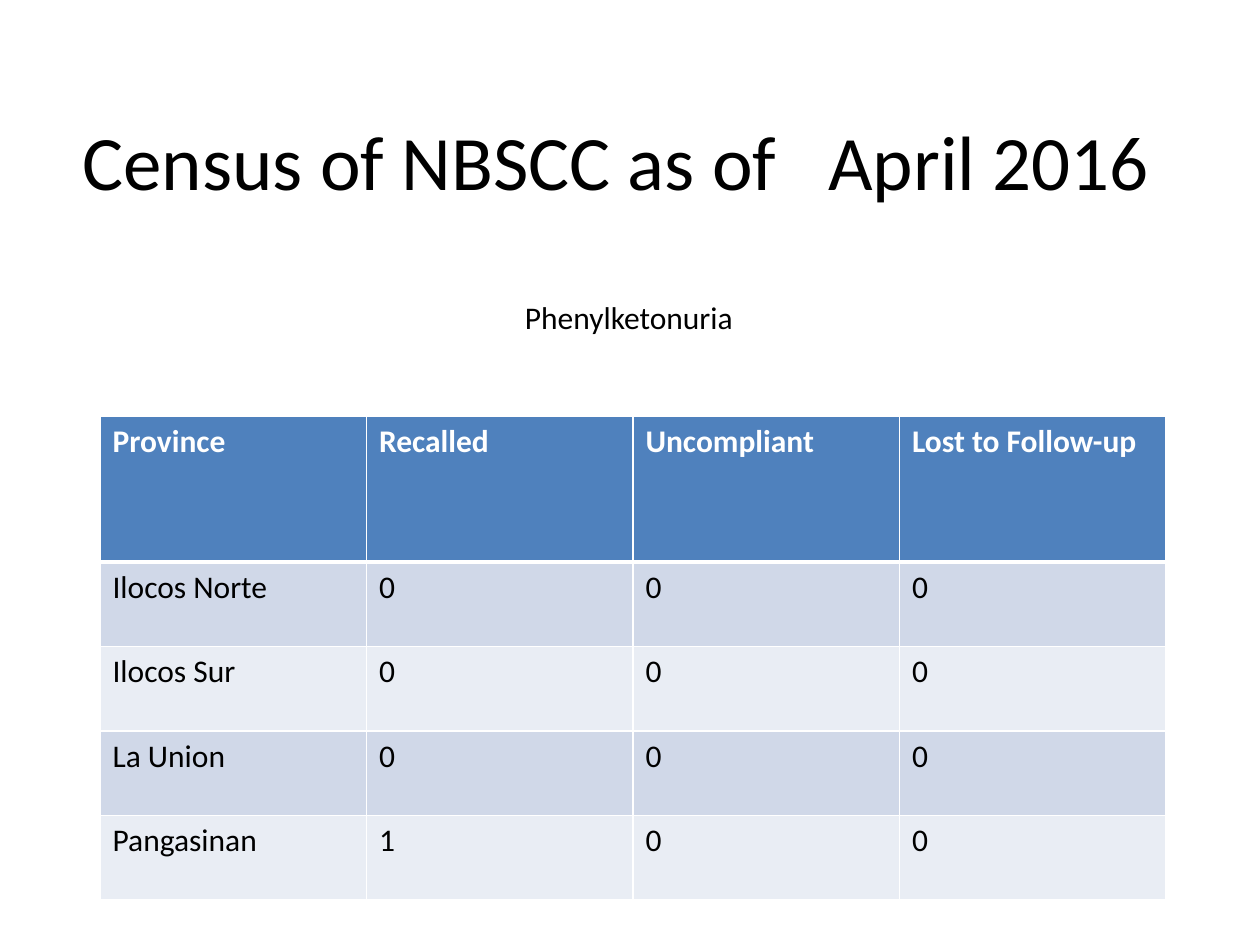
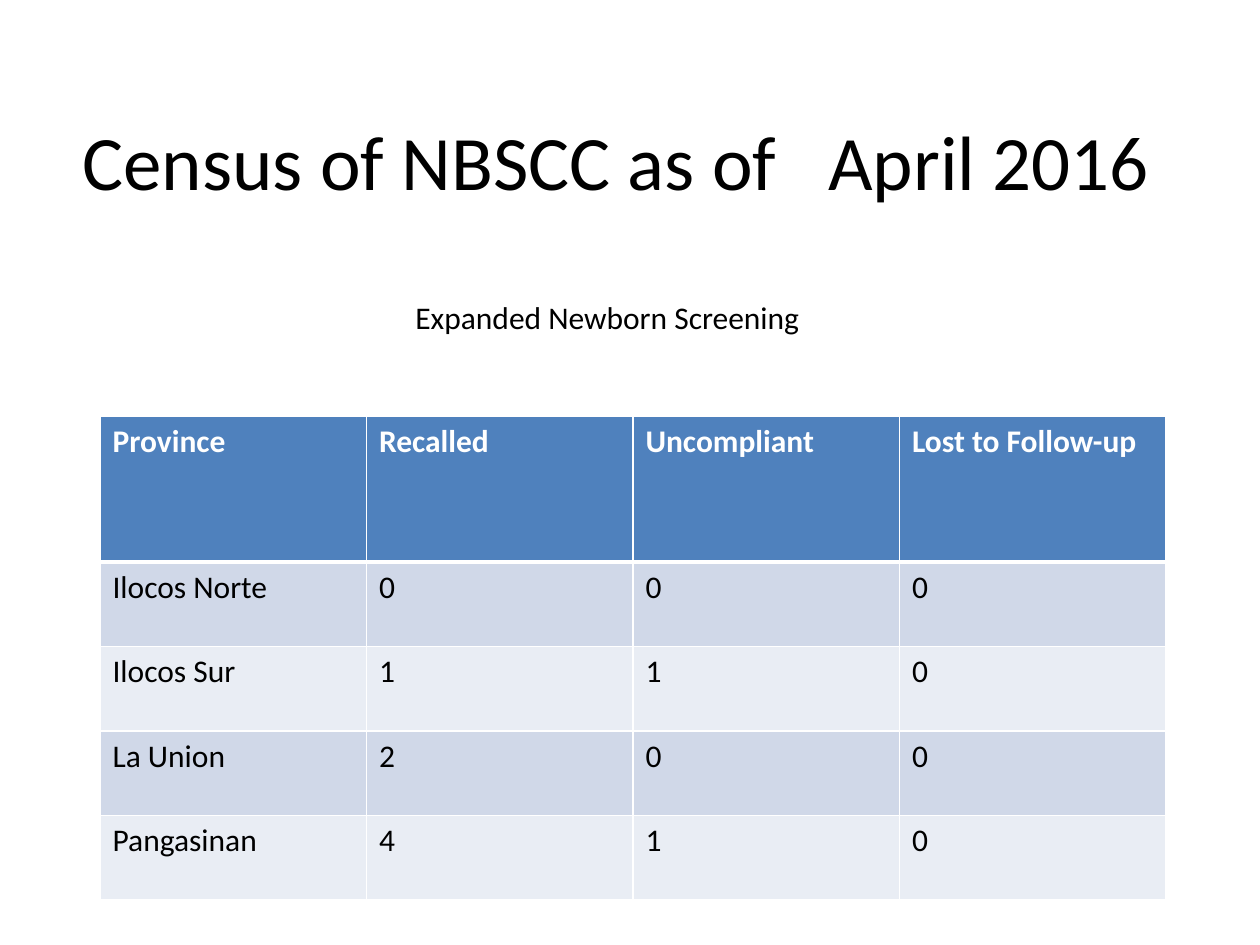
from dataclasses import dataclass

from lxml import etree
from pptx import Presentation
from pptx.dml.color import RGBColor
from pptx.enum.text import MSO_ANCHOR, MSO_AUTO_SIZE, PP_ALIGN
from pptx.oxml.ns import qn
from pptx.util import Emu, Pt

LEFT, CENTER = PP_ALIGN.LEFT, PP_ALIGN.CENTER
MIDDLE = MSO_ANCHOR.MIDDLE
FIT_SHAPE = MSO_AUTO_SIZE.SHAPE_TO_FIT_TEXT
TITLE_ONLY_LAYOUT = 5
EMU_PER_PX = 914400 // 126


@dataclass(frozen=True)
class Theme:
    font: str = "Calibri"
    title_size: int = 44
    text_size: int = 18
    text: str = "000000"
    header_text: str = "FFFFFF"
    header_fill: str = "4F81BD"
    band_fills: tuple = ("D0D8E8", "E9EDF4")
    border: str = "FFFFFF"
    thin_border: int = 1
    thick_border: int = 3


THEME = Theme()

# Boxes are left, top, width, height in px.
SLIDE_SIZE = (1260, 945)
TITLE_BOX = (67, 63, 1099, 193)
TABLE_BOX = (100, 416, 1066, 484)
HEADER_HEIGHT = 146

TITLE = "Census of NBSCC as of   April 2016"
HEADERS = ("Province", "Recalled", "Uncompliant", "Lost to Follow-up")
PROVINCES = ("Ilocos Norte", "Ilocos Sur", "La Union", "Pangasinan")

# Condition, its box, its alignment, and the counts for each province.
CENSUSES = (
    ("Phenylketonuria", (403, 292, 452, 50), CENTER,
     ((0, 0, 0), (0, 0, 0), (0, 0, 0), (1, 0, 0))),
    ("Expanded Newborn Screening", (403, 292, 504, 50), LEFT,
     ((0, 0, 0), (1, 1, 0), (2, 0, 0), (4, 1, 0))),
)


def px(length):
    return Emu(round(length * EMU_PER_PX))


def write(text_frame, text, size, color, alignment=LEFT, bold=False):
    paragraph = text_frame.paragraphs[0]
    paragraph.alignment = alignment
    run = paragraph.add_run()
    run.text = text
    run.font.name = THEME.font
    run.font.size = Pt(size)
    run.font.bold = bold
    run.font.color.rgb = RGBColor.from_string(color)


def add_title(slide, box):
    title = slide.shapes.title
    title.left, title.top, title.width, title.height = map(px, box)
    title.text_frame.vertical_anchor = MIDDLE
    write(title.text_frame, TITLE, THEME.title_size, THEME.text, CENTER)


def add_condition(slide, box, condition, alignment):
    text_frame = slide.shapes.add_textbox(*map(px, box)).text_frame
    text_frame.word_wrap = True
    text_frame.auto_size = FIT_SHAPE
    write(text_frame, condition, THEME.text_size, THEME.text, alignment)


def set_borders(cell, top, bottom):
    """Draw all four sides; top and bottom are widths in points."""
    properties = cell._tc.get_or_add_tcPr()
    widths = {"lnL": THEME.thin_border, "lnR": THEME.thin_border,
              "lnT": top, "lnB": bottom}
    for side, width in widths.items():
        line = etree.SubElement(properties, qn(f"a:{side}"), w=str(Pt(width)))
        fill = etree.SubElement(line, qn("a:solidFill"))
        etree.SubElement(fill, qn("a:srgbClr"), val=THEME.border)


def format_cell(cell, row_index, text):
    is_header = row_index == 0
    thin, thick = THEME.thin_border, THEME.thick_border
    set_borders(cell, top=thick if row_index == 1 else thin,
                bottom=thick if is_header else thin)
    band = THEME.band_fills[(row_index - 1) % len(THEME.band_fills)]
    cell.fill.solid()
    cell.fill.fore_color.rgb = RGBColor.from_string(
        THEME.header_fill if is_header else band)
    write(cell.text_frame, text, THEME.text_size,
          THEME.header_text if is_header else THEME.text, bold=is_header)


def add_census_table(slide, box, counts):
    rows = [HEADERS] + [(province, *map(str, values))
                        for province, values in zip(PROVINCES, counts)]
    table = slide.shapes.add_table(
        len(rows), len(HEADERS), *map(px, box)).table
    width, height = box[2:]
    for column in table.columns:
        column.width = px(width / len(HEADERS))
    for row_index, values in enumerate(rows):
        table.rows[row_index].height = px(
            HEADER_HEIGHT if row_index == 0
            else (height - HEADER_HEIGHT) / len(PROVINCES))
        for column_index, text in enumerate(values):
            format_cell(table.cell(row_index, column_index), row_index, text)


def add_census_slide(presentation, condition, condition_box, alignment, counts):
    layout = presentation.slide_layouts[TITLE_ONLY_LAYOUT]
    slide = presentation.slides.add_slide(layout)
    add_title(slide, TITLE_BOX)
    add_census_table(slide, TABLE_BOX, counts)
    add_condition(slide, condition_box, condition, alignment)


def main():
    presentation = Presentation()
    presentation.slide_width, presentation.slide_height = map(px, SLIDE_SIZE)
    for census in CENSUSES:
        add_census_slide(presentation, *census)
    presentation.save("out.pptx")


if __name__ == "__main__":
    main()
